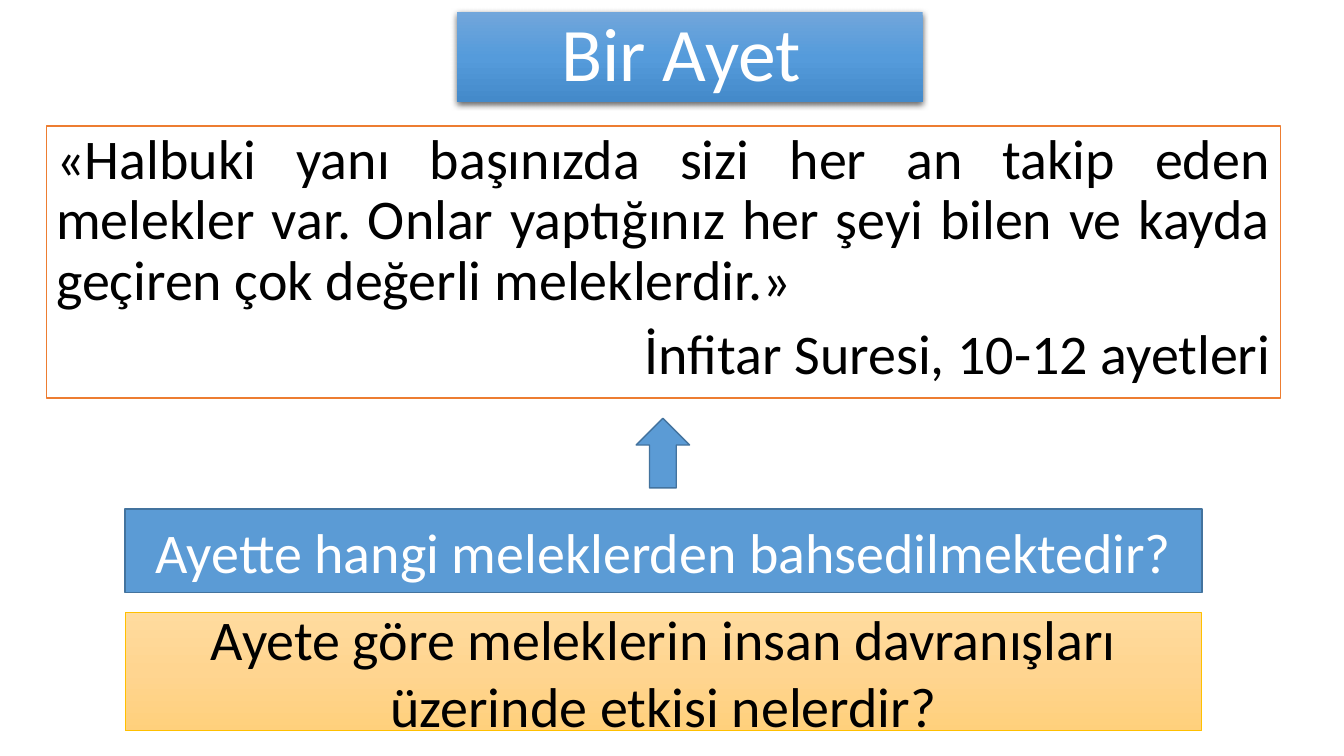
import copy

import pptx
import pptx.dml.color
import pptx.enum.shapes
import pptx.enum.text
import pptx.oxml
import pptx.oxml.ns
import pptx.util
from pptx.util import Inches

SHAPE = pptx.enum.shapes.MSO_SHAPE
ALIGN = pptx.enum.text.PP_ALIGN
ANCHOR = pptx.enum.text.MSO_ANCHOR
qn = pptx.oxml.ns.qn


def set_color(color, hex_string):
    color.rgb = pptx.dml.color.RGBColor.from_string(hex_string)


def add_box(geometry, place, fills, line=None, line_width=1, paragraphs=(),
            size=40, text_color="000000", anchor=ANCHOR.MIDDLE, line_spacing=None, space_before=0):
    """Add a shape; three fills make a downward gradient, paragraphs are (text, alignment) pairs."""
    box = slide.shapes.add_shape(geometry, *[Inches(length) for length in place])
    box.shadow.inherit = False

    if len(fills) == 1:
        box.fill.solid()
        set_color(box.fill.fore_color, fills[0])
    else:
        box.fill.gradient()
        box.fill.gradient_angle = 270
        stop_list = box.element.spPr.find(".//" + qn("a:gsLst"))
        stop_list.append(copy.deepcopy(stop_list[0]))
        for stop, position, color in zip(box.fill.gradient_stops, (0, 0.5, 1), fills):
            stop.position = position
            set_color(stop.color, color)

    if line:
        set_color(box.line.color, line)
        box.line.width = pptx.util.Pt(line_width)
    else:
        box.line.fill.background()

    frame = box.text_frame
    frame.word_wrap = True
    frame.vertical_anchor = anchor
    if paragraphs:
        frame.text = "\n".join(text for text, _ in paragraphs)
        for paragraph, (_, alignment) in zip(frame.paragraphs, paragraphs):
            paragraph.alignment = alignment
            paragraph.line_spacing = line_spacing
            paragraph.space_before = pptx.util.Pt(space_before)
            font = paragraph.runs[0].font
            font.name = "Calibri"
            font.size = pptx.util.Pt(size)
            set_color(font.color, text_color)
    return box


presentation = pptx.Presentation()
presentation.slide_width = Inches(13.33)
presentation.slide_height = Inches(7.5)
slide = presentation.slides.add_slide(presentation.slide_layouts[6])

heading = add_box(
    SHAPE.RECTANGLE, (4.53, 0.12, 4.62, 0.89), ["71A6DB", "559BDB", "448ACA"],
    paragraphs=[("Bir Ayet ", ALIGN.CENTER)],
    size=54, text_color="FFFFFF", line_spacing=0.9)
heading.element.spPr.find(qn("a:effectLst")).append(pptx.oxml.parse_xml(
    '<a:outerShdw xmlns:a="http://schemas.openxmlformats.org/drawingml/2006/main"'
    ' blurRad="57150" dist="19050" dir="5400000" algn="ctr" rotWithShape="0">'
    '<a:srgbClr val="000000"><a:alpha val="63000"/></a:srgbClr></a:outerShdw>'))

add_box(
    SHAPE.RECTANGLE, (0.46, 1.25, 12.24, 2.7), ["FFFFFF"], line="ED7D31",
    paragraphs=[
        ("«Halbuki yanı başınızda sizi her an takip eden melekler var. "
         "Onlar yaptığınız her şeyi bilen ve kayda geçiren çok değerli meleklerdir.»", ALIGN.JUSTIFY),
        ("İnfitar Suresi, 10-12 ayetleri", ALIGN.RIGHT),
    ],
    anchor=ANCHOR.TOP, line_spacing=0.9, space_before=10)

add_box(
    SHAPE.RECTANGLE, (1.24, 5.05, 10.68, 0.83), ["5B9BD5"], line="43739E",
    paragraphs=[("Ayette hangi meleklerden bahsedilmektedir?", ALIGN.CENTER)],
    text_color="FFFFFF")

add_box(SHAPE.UP_ARROW, (6.31, 4.15, 0.53, 0.69), ["5B9BD5"], line="43739E")

add_box(
    SHAPE.RECTANGLE, (1.24, 6.08, 10.68, 1.17), ["FFDB9E", "FFD590", "FFD07C"],
    line="FFC000", line_width=0.5,
    paragraphs=[("Ayete göre meleklerin insan davranışları üzerinde etkisi nelerdir?", ALIGN.CENTER)])

presentation.save("out.pptx")
